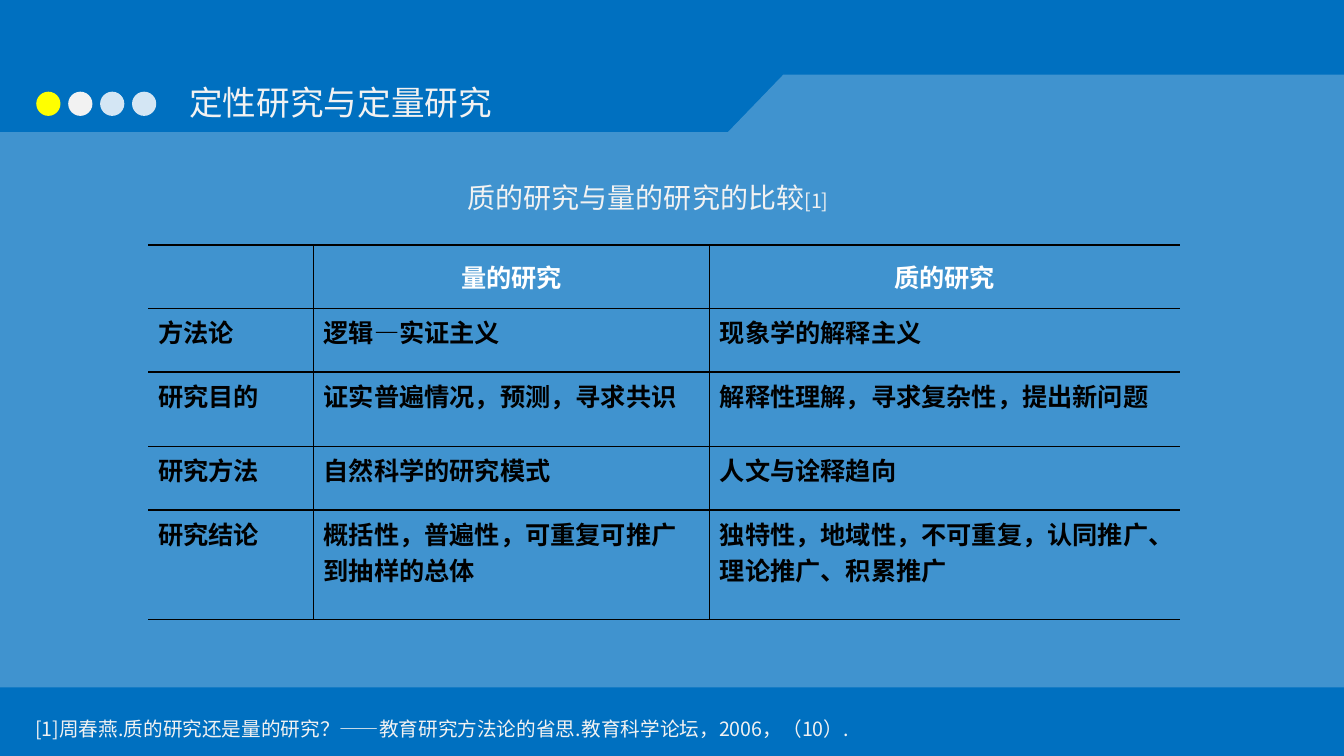
from lxml import etree
from pptx import Presentation
from pptx.dml.color import RGBColor
from pptx.enum.shapes import MSO_SHAPE as Shape
from pptx.enum.text import MSO_ANCHOR as Anchor, PP_ALIGN as Align
from pptx.oxml.ns import qn
from pptx.util import Inches, Pt

BLUE = RGBColor(0x00, 0x70, 0xC0)
WHITE = RGBColor(0xFF, 0xFF, 0xFF)
PALE = RGBColor(0xF2, 0xF2, 0xF2)
YELLOW = RGBColor(0xFF, 0xFF, 0x00)
BLACK = RGBColor(0x00, 0x00, 0x00)
FONT = "Noto Sans CJK SC"

DOTS = [(YELLOW, 100), (PALE, 100), (WHITE, 83), (WHITE, 83)]
COLUMN_WIDTHS = [1.64, 3.93, 4.66]
ROW_HEIGHTS = [0.63, 0.63, 0.74, 0.63, 1.09]
COMPARISON = [
    ["", "量的研究", "质的研究"],
    ["方法论", "逻辑—实证主义", "现象学的解释主义"],
    ["研究目的", "证实普遍情况，预测，寻求共识", "解释性理解，寻求复杂性，提出新问题"],
    ["研究方法", "自然科学的研究模式", "人文与诠释趋向"],
    ["研究结论", "概括性，普遍性，可重复可推广到抽样的总体",
     "独特性，地域性，不可重复，认同推广、理论推广、积累推广"],
]


def paint(shape, color, opacity=100):
    shape.shadow.inherit = False
    shape.line.fill.background()
    shape.fill.solid()
    shape.fill.fore_color.rgb = color
    if opacity < 100:
        tint = shape.fill._xPr.find(qn("a:solidFill"))[0]
        etree.SubElement(tint, qn("a:alpha"), val=str(opacity * 1000))


def add_span(para, text, size, color, bold=False):
    span = para.add_run()
    span.text = text
    font = span.font
    font.name, font.size, font.bold = FONT, Pt(size), bold
    font.color.rgb = color
    latin = font._element.find(qn("a:latin"))
    latin.addnext(latin.makeelement(qn("a:ea"), {"typeface": FONT}))


def add_text(page, left, top, width, height, spans):
    box = page.shapes.add_textbox(Inches(left), Inches(top), Inches(width), Inches(height))
    box.text_frame.word_wrap = True
    para = box.text_frame.paragraphs[0]
    for text, size in spans:
        add_span(para, text, size, PALE)


def add_panel(page, left, top, width, height):
    right, bottom, shoulder = left + width, top + height, top + 0.57
    corners = [(left, shoulder), (left + 7.22, shoulder), (left + 7.77, top),
               (right, top), (right, bottom), (left, bottom)]
    points = [(Inches(x), Inches(y)) for x, y in corners]
    outline = page.shapes.build_freeform(*points[0])
    outline.add_line_segments(points[1:], close=True)
    paint(outline.convert_to_shape(), WHITE, 25)


def add_dots(page, left, top, width, size):
    pitch = (width - size) / (len(DOTS) - 1)
    for index, (color, opacity) in enumerate(DOTS):
        dot = page.shapes.add_shape(Shape.OVAL, Inches(left + index * pitch), Inches(top),
                                    Inches(size), Inches(size))
        paint(dot, color, opacity)


def set_borders(cell, sides):
    properties = cell._tc.get_or_add_tcPr()
    for position, side in enumerate("LRTB"):
        line = etree.Element(qn("a:ln" + side), w=str(Pt(1)))
        if side in sides:
            fill = etree.SubElement(line, qn("a:solidFill"))
            etree.SubElement(fill, qn("a:srgbClr"), val=str(BLACK))
        else:
            etree.SubElement(line, qn("a:noFill"))
        properties.insert(position, line)


def add_comparison(page, left, top, width, height):
    table = page.shapes.add_table(len(COMPARISON), len(COLUMN_WIDTHS), Inches(left), Inches(top),
                                  Inches(width), Inches(height)).table
    table.first_row = table.horz_banding = False
    for column, column_width in zip(table.columns, COLUMN_WIDTHS):
        column.width = Inches(column_width)
    for row, row_height in zip(table.rows, ROW_HEIGHTS):
        row.height = Inches(row_height)
    for row_index, texts in enumerate(COMPARISON):
        header = row_index == 0
        for column_index, text in enumerate(texts):
            cell = table.cell(row_index, column_index)
            cell.fill.background()
            set_borders(cell, ["RTB", "LRTB", "LTB"][column_index])
            cell.vertical_anchor = Anchor.MIDDLE if header else Anchor.TOP
            para = cell.text_frame.paragraphs[0]
            para.alignment = Align.CENTER if header else Align.LEFT
            if text:
                add_span(para, text, 18, WHITE if header else BLACK, True)


def main():
    deck = Presentation()
    deck.slide_width, deck.slide_height = Inches(13.33), Inches(7.5)
    page = deck.slides.add_slide(deck.slide_layouts[6])
    page.background.fill.solid()
    page.background.fill.fore_color.rgb = BLUE
    add_panel(page, 0, 0.74, 13.33, 6.08)
    add_dots(page, 0.36, 0.91, 1.19, 0.24)
    add_text(page, 1.78, 0.76, 3.94, 0.5, [("定性研究与定量研究", 24)])
    add_text(page, 4.54, 1.74, 4.9, 0.44, [("质的研究与量的研究的比较", 20), ("[1]", 14)])
    add_comparison(page, 1.47, 2.43, 10.23, 3.72)
    add_text(page, 0.25, 7.06, 11.54, 0.34, [
        ("[1]周春燕.质的研究还是量的研究？——教育研究方法论的省思.教育科学论坛，2006，（10）.", 14)])
    deck.save("out.pptx")


if __name__ == "__main__":
    main()
